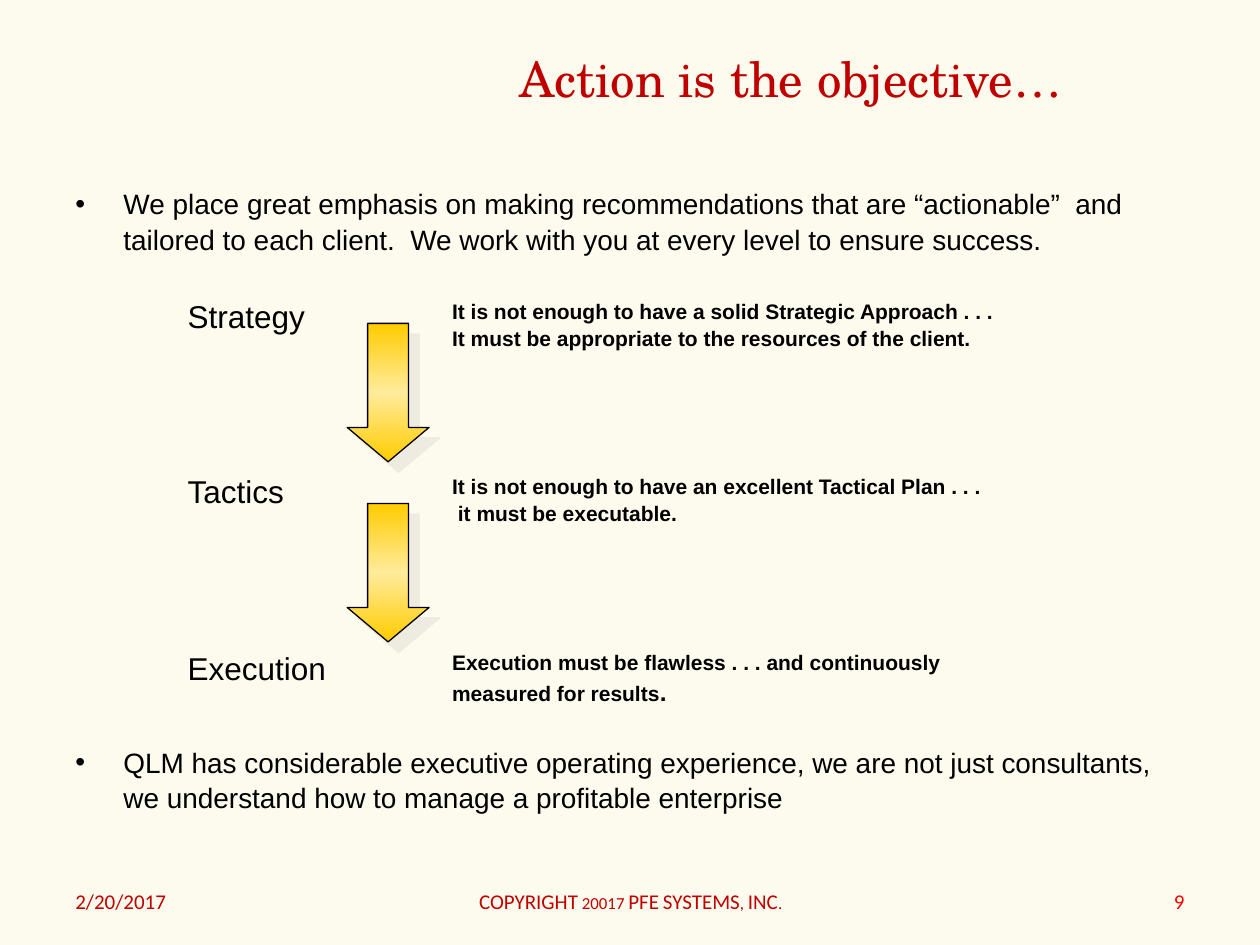
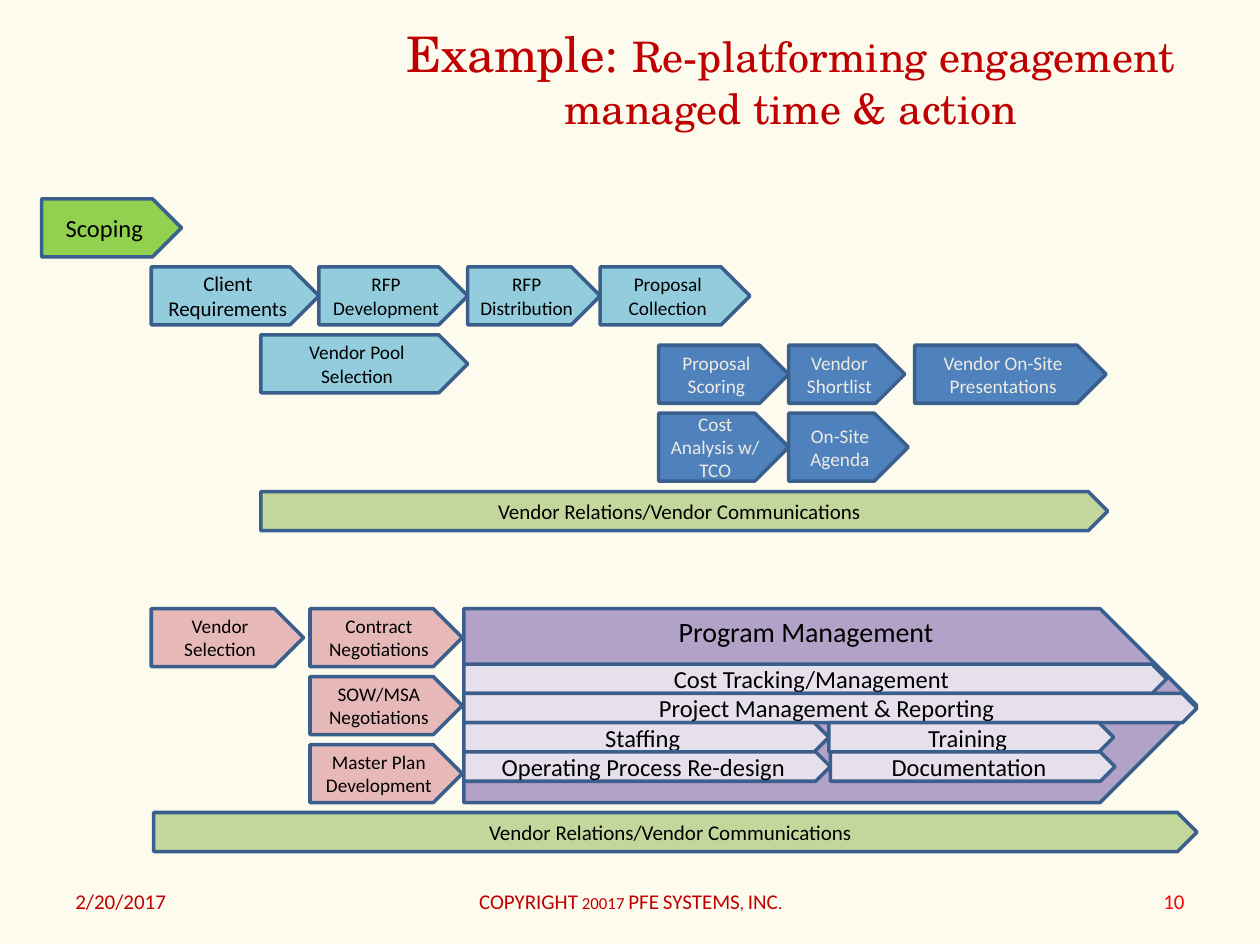
from copy import deepcopy

from lxml import etree
from pptx import Presentation
from pptx import util as u
from pptx.dml import color
from pptx.enum import shapes, text
from pptx.oxml import ns

HUES = {
    "cream": "FCFBED", "red": "C00000", "bright": "FF0000", "black": "000000",
    "pale": "EEECE1", "gold": "FFCC00", "straw": "FFEB9B", "edge": "3A5F8C",
    "lime": "92D050", "aqua": "93CDDD", "blue": "4F81BD", "rose": "E6B9B8",
    "plum": "B3A2C7", "mist": "E6E0EC", "sage": "C3D69B",
}
SERIF, SANS, BODY = "TeX Gyre Schola", "Calibri", "Arial"
LEFT, MID, RIGHT = text.PP_ALIGN.LEFT, text.PP_ALIGN.CENTER, text.PP_ALIGN.RIGHT
TOP, CENTRE = text.MSO_ANCHOR.TOP, text.MSO_ANCHOR.MIDDLE
PLAIN_GRID = "{2D5ABB26-0587-4C30-8999-92F81FD0307C}"


def rgb(name):
    return color.RGBColor.from_string(HUES[name])


def cms(*sizes):
    return [u.Cm(size) for size in sizes]


def child(node, tag, **attrs):
    return etree.SubElement(node, ns.qn(tag), **attrs)


class Deck:
    def __init__(self):
        self.prs = Presentation()
        self.prs.slide_width, self.prs.slide_height = cms(25.4, 19.05)
        self.slide = None

    def page(self, number, *parts):
        self.slide = self.prs.slides.add_slide(self.prs.slide_layouts[5])
        self.slide.background.fill.solid()
        self.slide.background.fill.fore_color.rgb = rgb("cream")
        self.title(parts)
        self.foot(1.27, 5.92, "2/20/2017", LEFT)
        mark = self.foot(8.69, 8.05, "COPYRIGHT 20017 PFE SYSTEMS, INC.", MID)
        mark.font._element.set("cap", "small")
        self.foot(18.21, 5.92, str(number), RIGHT, "bright")

    def title(self, parts):
        head = self.slide.shapes.title
        head.left, head.top, head.width, head.height = cms(7.75, 0.2, 16.38, 2.74)
        frame = head.text_frame
        frame.auto_size = text.MSO_AUTO_SIZE.NONE
        frame.text = parts[0][0]
        for words, _ in parts[1:]:
            frame.paragraphs[0].add_run().text = words
        self.style(frame, 28, "red", SERIF, MID, CENTRE)
        for run, (_, size) in zip(frame.paragraphs[0].runs, parts):
            run.font.size = u.Pt(size)

    def style(self, frame, size, hue="black", font=SANS, align=LEFT,
              anchor=TOP, bold=False):
        frame.word_wrap = True
        frame.vertical_anchor = anchor
        for para in frame.paragraphs:
            para.alignment = align
            for run in para.runs:
                run.font.size = u.Pt(size)
                run.font.name = font
                run.font.bold = bold
                run.font.color.rgb = rgb(hue)

    def foot(self, x, w, words, align, hue="red"):
        frame = self.slide.shapes.add_textbox(*cms(x, 17.65, w, 1.02)).text_frame
        frame.text = words
        self.style(frame, 12, hue, SANS, align, CENTRE)
        return frame.paragraphs[0].runs[0]

    def points(self, box, lines, gap):
        frame = self.slide.shapes.add_textbox(*cms(*box)).text_frame
        frame.text = "\n".join(lines)
        for i, para in enumerate(frame.paragraphs):
            para.line_spacing = 1.05
            para.space_before = u.Pt(gap if i else 0)
            props = para._p.get_or_add_pPr()
            props.set("marL", str(u.Cm(0.97)))
            props.set("indent", str(-u.Cm(0.97)))
            child(props, "a:buFont", typeface=BODY)
            child(props, "a:buChar", char="•")
        self.style(frame, 16, font=BODY)

    def table(self, box, wides, highs, rows):
        grid = self.slide.shapes.add_table(len(rows), len(wides), *cms(*box)).table
        grid.first_row = grid.horz_banding = False
        grid._tbl.tblPr.find(ns.qn("a:tableStyleId")).text = PLAIN_GRID
        for col, wide in zip(grid.columns, wides):
            col.width = u.Cm(wide)
        for row, high, words in zip(grid.rows, highs, rows):
            row.height = u.Cm(high)
            for i, cell in enumerate(row.cells):
                cell.fill.background()
                cell.text_frame.text = words[i]
                for para in cell.text_frame.paragraphs[1:]:
                    para.space_before = u.Pt(2.4)
                self.style(cell.text_frame, 12 if i else 18, font=BODY, bold=i > 0)
        return grid

    def arrow(self, x, y):
        kind = shapes.MSO_SHAPE.DOWN_ARROW
        shape = self.slide.shapes.add_shape(kind, *cms(x, y, 1.65, 2.79))
        shape.adjustments[1] = 0.42
        shape.fill.gradient()
        shape.fill.gradient_angle = 90
        stops = shape.fill._fill._gradFill.gsLst
        stops.append(deepcopy(stops[0]))
        for i, stop in enumerate(shape.fill.gradient_stops):
            stop.position = i / 2
            stop.color.rgb = rgb("straw" if i == 1 else "gold")
        shape.line.color.rgb = rgb("black")
        shape.line.width = u.Pt(0.75)
        shape.shadow.inherit = False
        shade = child(shape._element.spPr.find(ns.qn("a:effectLst")), "a:outerShdw",
                      dist=str(u.Pt(8.5)), dir="2700000", algn="ctr", rotWithShape="0")
        child(shade, "a:srgbClr", val=HUES["pale"])

    def step(self, fill, x, y, w, h, words, size=11, anchor=CENTRE):
        kind = shapes.MSO_SHAPE.PENTAGON
        shape = self.slide.shapes.add_shape(kind, *cms(x, y, w, h))
        shape.shadow.inherit = False
        shape.fill.solid()
        shape.fill.fore_color.rgb = rgb(fill)
        shape.line.color.rgb = rgb("edge")
        shape.line.width = u.Pt(2)
        frame = shape.text_frame
        frame.margin_left = frame.margin_right = u.Cm(0.24)
        frame.text = words
        hue = "pale" if fill == "blue" else "black"
        self.style(frame, size, hue, SANS, MID, anchor)

    def chain(self, fill, x, y, h, steps, size=11, gap=0):
        for words, wide in steps:
            self.step(fill, x, y, wide, h, words, size)
            x += wide + gap


def action(deck):
    deck.page(9, ("Action is the objective…", 28))
    deck.points((1.27, 3.61, 22.38, 13.54), [
        "We place great emphasis on making recommendations that are “actionable”  and "
        "tailored to each client.  We work with you at every level to ensure success.",
        "QLM has considerable executive operating experience, we are not just "
        "consultants, we understand how to manage a profitable enterprise",
    ], 279)
    grid = deck.table((3.53, 5.92, 20.4, 8.56), (5.33, 15.06), (3.53, 3.56, 1.47), [
        ("Strategy", "It is not enough to have a solid Strategic Approach . . .\n"
                     "It must be appropriate to the resources of the client."),
        ("Tactics", "It is not enough to have an excellent Tactical Plan . . .\n"
                    " it must be executable."),
        ("Execution", "Execution must be flawless . . . and continuously\n"
                      "measured for results"),
    ])
    stop = grid.cell(2, 1).text_frame.paragraphs[1].add_run()
    stop.text = "."
    stop.font.size, stop.font.bold, stop.font.name = u.Pt(14), True, BODY
    stop.font.color.rgb = rgb("black")
    for y in (6.52, 10.15):
        deck.arrow(7, y)


def plan(deck):
    deck.page(10, ("Example: ", 28),
              ("Re-platforming engagement managed time & action", 24))
    high, pitch = 1.17, 1.37
    deck.step("lime", 0.84, 4.01, 2.82, high, "Scoping", 14)
    deck.step("aqua", 3.05, 5.38, 3.38, high, "Client Requirements", 12)
    deck.chain("aqua", 6.43, 5.38, high, [
        ("RFP Development", 3), ("RFP Distribution", 2.67),
        ("Proposal\nCollection", 3.02)])
    deck.step("aqua", 5.26, 6.75, 4.17, high, "Vendor Pool Selection")

    deck.chain("blue", 13.28, 6.96, high, [
        ("Proposal\nScoring", 2.62), ("Vendor Shortlist", 2.34)])
    deck.step("blue", 18.44, 6.96, 3.86, high, "Vendor On-Site Presentations")
    deck.chain("blue", 13.28, 8.33, 1.37, [
        ("Cost Analysis w/ TCO", 2.62), ("On-Site Agenda", 2.41)])

    top = 12.27
    deck.chain("rose", 3.05, top, high, [
        ("Vendor Selection", 3.07), ("Contract Negotiations", 3.07)], gap=0.13)
    for i, words in enumerate(("SOW/MSA\nNegotiations", "Master Plan\nDevelopment"), 1):
        deck.step("rose", 6.25, top + i * pitch, 3.07, high, words)

    deck.step("plum", 9.35, top, 14.78, 3.91, "Program Management", 16, TOP)
    bars = [
        [("Cost Tracking/Management", 14.17)],
        [("Project Management & Reporting", 14.78)],
        [("Staffing", 7.36), ("Training", 5.74)],
        [("Operating Process Re-design", 7.39), ("Documentation", 5.74)],
    ]
    for i, steps in enumerate(bars):
        deck.chain("mist", 9.35, 13.39 + i * 0.59, 0.59, steps, 14)

    for x, y, w in ((5.26, 9.91, 17.07), (3.1, 16.38, 21.03)):
        deck.step("sage", x, y, w, 0.79, "Vendor Relations/Vendor Communications", 12)


def main():
    deck = Deck()
    action(deck)
    plan(deck)
    deck.prs.save("out.pptx")


if __name__ == "__main__":
    main()
